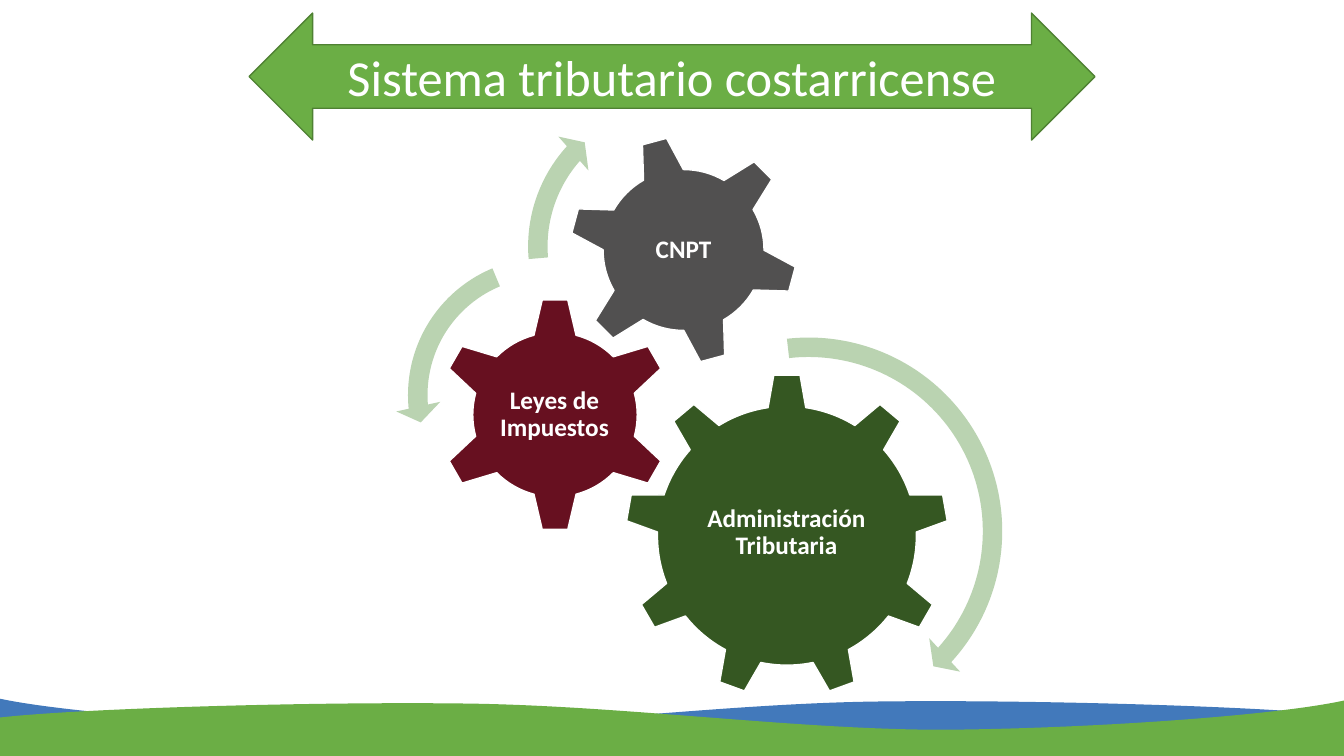
from pptx import Presentation
from pptx.dml.color import RGBColor
from pptx.enum.shapes import MSO_SHAPE
from pptx.enum.text import MSO_ANCHOR, PP_ALIGN
from pptx.oxml.ns import qn
from pptx.util import Inches, Pt

GREEN = RGBColor(0x6B, 0xAE, 0x45)
GREEN_EDGE = RGBColor(0x4F, 0x81, 0x33)
BLUE = RGBColor(0x42, 0x79, 0xBB)
DARK_GREEN = RGBColor(0x35, 0x57, 0x22)
WINE = RGBColor(0x67, 0x10, 0x20)
GREY = RGBColor(0x51, 0x50, 0x50)
PALE_GREEN = RGBColor(0xBA, 0xD3, 0xB1)
WHITE = RGBColor(0xFF, 0xFF, 0xFF)
GEAR_6, GEAR_9 = MSO_SHAPE.GEAR_6, MSO_SHAPE.GEAR_9
CLOCKWISE = MSO_SHAPE.CIRCULAR_ARROW
COUNTERCLOCKWISE = MSO_SHAPE.LEFT_CIRCULAR_ARROW
MIDDLE, CENTER = MSO_ANCHOR.MIDDLE, PP_ALIGN.CENTER


def paint(shape, fill, edge=None):
    shape.shadow.inherit = False
    shape.fill.solid()
    shape.fill.fore_color.rgb = fill
    if edge is None:
        shape.line.fill.background()
    else:
        shape.line.color.rgb = edge
        shape.line.width = Pt(1)


def write(shape, text, size, bold=False):
    frame = shape.text_frame
    frame.word_wrap = True
    frame.vertical_anchor = MIDDLE
    paragraph = frame.paragraphs[0]
    paragraph.alignment = CENTER
    run = paragraph.add_run()
    run.text = text
    run.font.name = "Calibri"
    run.font.size = Pt(size)
    run.font.bold = bold
    run.font.color.rgb = WHITE
    return frame


presentation = Presentation()
presentation.slide_width = Inches(13.33)
presentation.slide_height = Inches(7.5)
slide = presentation.slides.add_slide(presentation.slide_layouts[6])
shapes = slide.shapes

# Waves along the bottom: a start point, three Bézier curves, two bottom corners
waves = [
    (BLUE, (13.33, 7.1), [
        (12.56, 7.01), (10.26, 6.94), (8.7, 6.96),
        (7.15, 6.98), (5.43, 7.22), (3.98, 7.22),
        (2.53, 7.21), (0.68, 7.08), (-0.01, 6.93)],
     [(-0.01, 7.49), (13.33, 7.5)]),
    (GREEN, (-0.01, 7.12), [
        (0.76, 7.03), (3.06, 6.96), (4.62, 6.98),
        (6.18, 7), (7.89, 7.24), (9.35, 7.24),
        (10.8, 7.23), (12.65, 7.1), (13.33, 6.95)],
     [(13.34, 7.5), (0, 7.52)]),
]
for color, start, curve_points, corners in waves:
    builder = shapes.build_freeform(Inches(start[0]), Inches(start[1]))
    builder.add_line_segments(
        [(Inches(x), Inches(y)) for x, y in curve_points + corners], close=True)
    wave = builder.convert_to_shape()
    paint(wave, color)
    # Join every three line points into one cubic curve
    lines = list(wave._element.iter(qn("a:lnTo")))
    for index in range(0, len(curve_points), 3):
        curve, *others = lines[index:index + 3]
        curve.tag = qn("a:cubicBezTo")
        for line in others:
            curve.append(line[0])
            line.getparent().remove(line)

# Title arrow
title = shapes.add_shape(MSO_SHAPE.LEFT_RIGHT_ARROW, Inches(2.47), Inches(0.13),
                         Inches(8.39), Inches(1.26))
paint(title, GREEN, GREEN_EDGE)
write(title, "Sistema tributario costarricense", 36)

# Gears with upright labels
gears = [
    (GEAR_9, (6.2, 3.71, 3.21), 0, DARK_GREEN,
     "Administración Tributaria", (6.84, 4.46, 1.92, 1.65)),
    (GEAR_6, (4.34, 2.95, 2.33), 0, WINE,
     "Leyes de Impuestos", (4.92, 3.54, 1.16, 1.15)),
    (GEAR_6, (5.64, 1.34, 2.28), 345, GREY,
     "CNPT", (6.14, 1.84, 1.28, 1.28)),
]
for kind, (left, top, size), rotation, color, text, label_box in gears:
    gear = shapes.add_shape(kind, Inches(left), Inches(top), Inches(size), Inches(size))
    gear.rotation = rotation
    paint(gear, color, WHITE)
    label = shapes.add_textbox(*(Inches(value) for value in label_box))
    frame = write(label, text, 18, bold=True)
    frame.margin_left = frame.margin_right = Inches(0.03)
    frame.margin_top = frame.margin_bottom = Inches(0.03)
    frame.paragraphs[0].line_spacing = 0.9

# Rotation arrows around the gears
turns = [
    (CLOCKWISE, (5.97, 3.22, 4.1), (0.047, 2.99, 25.379, 158.151, 0.055)),
    (COUNTERCLOCKWISE, (3.92, 2.43, 2.98), (0.065, 4.3, 104.891, 148.378, 0.075)),
    (CLOCKWISE, (5.11, 0.84, 3.21), (0.06, 3.941, 133.138, 105.082, 0.07)),
]
for kind, (left, top, size), adjustments in turns:
    turn = shapes.add_shape(kind, Inches(left), Inches(top), Inches(size), Inches(size))
    for index, value in enumerate(adjustments):
        turn.adjustments[index] = value
    paint(turn, PALE_GREEN)

presentation.save("out.pptx")
